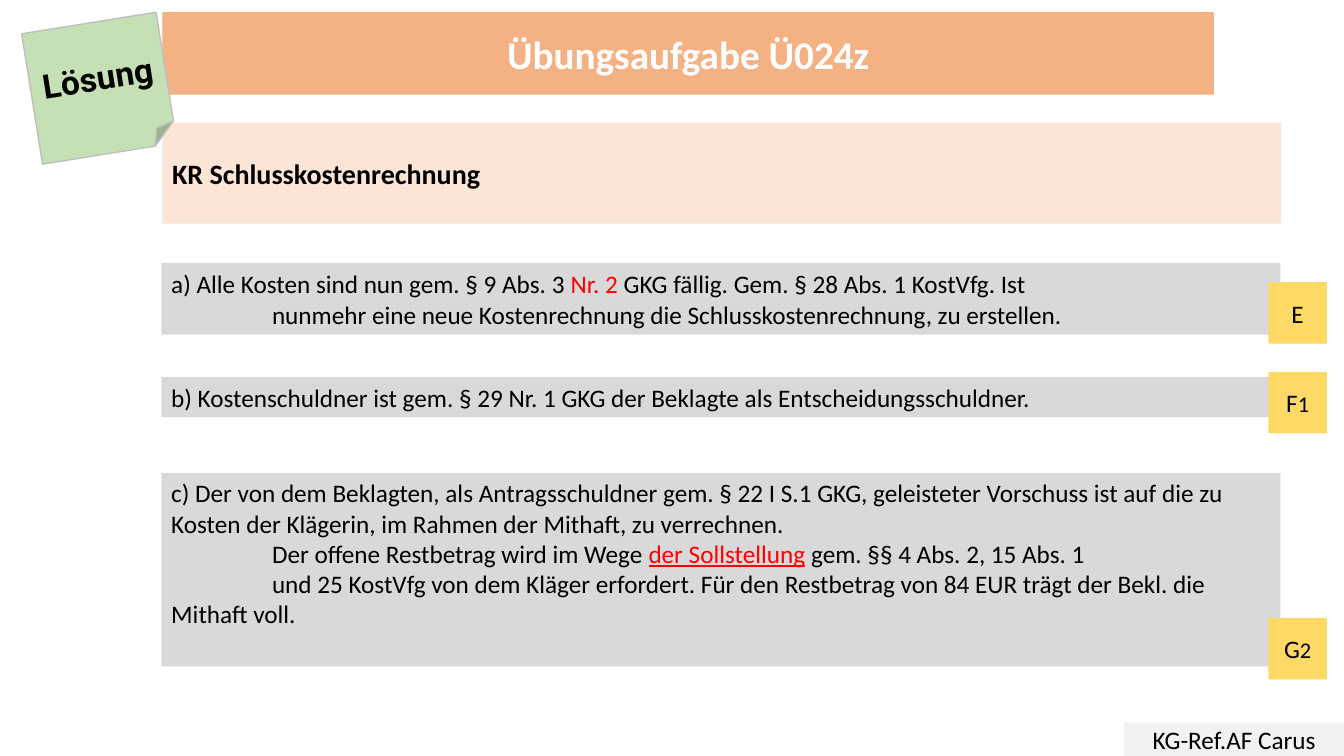
from pptx import Presentation
from pptx import util as u
from pptx.dml.color import RGBColor
from pptx.enum import shapes, text
from pptx.oxml.ns import qn

COLORS = {
    "header": "F4B183", "subject": "FBE5D6", "answer": "D9D9D9",
    "badge": "FFD966", "footer": "F2F2F2", "note": "C5E0B4",
    "note_edge": "BFBFBF", "ink": "000000", "white": "FFFFFF", "red": "FF0000",
}
SHAPE = shapes.MSO_SHAPE
ANCHOR = text.MSO_ANCHOR
CENTER, LEFT = text.PP_ALIGN.CENTER, text.PP_ALIGN.LEFT


def color(name):
    return RGBColor.from_string(COLORS[name])


class SolutionSlide:
    """Style and element builders for one slide."""

    def __init__(self, deck, font="Calibri"):
        self.font = font
        self.slide = deck.slides.add_slide(deck.slide_layouts[5])

    def fill_text(self, shape, paragraphs, size=18, ink="ink", bold=False,
                  align=LEFT, anchor=ANCHOR.MIDDLE, font=None):
        """Each paragraph is (first-line indent, runs); a run is (words, overrides)."""
        frame = shape.text_frame
        frame.word_wrap = True
        frame.auto_size = text.MSO_AUTO_SIZE.NONE
        frame.vertical_anchor = anchor
        for number, (indent, runs) in enumerate(paragraphs):
            paragraph = frame.add_paragraph() if number else frame.paragraphs[0]
            paragraph.alignment = align
            if indent:
                paragraph._p.get_or_add_pPr().set("indent", str(u.Inches(indent)))
            for words, style in runs:
                run = paragraph.add_run()
                run.text = words
                run.font.name = font or self.font
                run.font.size = u.Pt(style.get("size", size))
                run.font.bold = bold
                run.font.underline = style.get("underline", False)
                run.font.color.rgb = color(style.get("ink", ink))

    def title(self, box, words):
        header = self.slide.shapes.title
        header.left, header.top, header.width, header.height = map(u.Inches, box)
        outline = header._element.spPr.makeelement(qn("a:prstGeom"), {"prst": "roundRect"})
        header._element.spPr.append(outline)
        header.fill.solid()
        header.fill.fore_color.rgb = color("header")
        self.fill_text(header, [(0, [(words, {})])], size=28, ink="white",
                       bold=True, align=CENTER)

    def panel(self, box, fill, paragraphs, kind=SHAPE.RECTANGLE, edge=None, **style):
        panel = self.slide.shapes.add_shape(kind, *map(u.Inches, box))
        panel.shadow.inherit = False
        panel.fill.solid()
        panel.fill.fore_color.rgb = color(fill)
        if edge:
            panel.line.color.rgb = color(edge)
            panel.line.width = u.Pt(1)
        else:
            panel.line.fill.background()
        self.fill_text(panel, paragraphs, **style)
        return panel

    def answer(self, top, height, paragraphs, anchor=ANCHOR.MIDDLE):
        self.panel((1.6, top, 11.1, height), "answer", paragraphs, anchor=anchor)

    def badge(self, top, letter, digit):
        runs = [(letter, {})]
        if digit:
            runs.append((digit, {"size": 16}))
        self.panel((12.58, top, 0.58, 0.61), "badge", [(0, runs)], align=CENTER)


def main():
    deck = Presentation()
    deck.slide_width, deck.slide_height = u.Inches(13.33), u.Inches(7.5)
    page = SolutionSlide(deck)

    # Header, subject and footer
    page.title((1.61, 0.12, 10.43, 0.82), "Übungsaufgabe Ü024z")
    page.panel((1.61, 1.22, 11.1, 1), "subject",
               [(0, [("KR Schlusskostenrechnung", {})])], size=20, bold=True)
    page.panel((11.15, 7.17, 2.18, 0.33), "footer",
               [(0, [("KG-Ref.AF Carus", {})])], align=CENTER)

    # Sticky note
    note = page.panel((0.31, 0.22, 1.35, 1.31), "note", [(0, [("Lösung", {})])],
                      kind=SHAPE.FOLDED_CORNER, edge="note_edge",
                      size=24, bold=True, align=CENTER, font="Roboto")
    note.rotation = 350.9

    # Answers a) to c)
    page.answer(2.61, 0.71, [
        (0, [("a) Alle Kosten sind nun gem. § 9 Abs. 3 ", {}),
             ("Nr. 2 ", {"ink": "red"}),
             ("GKG fällig. Gem. § 28 Abs. 1 KostVfg. Ist", {})]),
        (1, [("nunmehr eine neue Kostenrechnung die Schlusskostenrechnung, zu erstellen.", {})]),
    ])
    page.answer(3.74, 0.4, [
        (0, [("b) Kostenschuldner ist gem. § 29 Nr. 1 GKG der Beklagte "
              "als Entscheidungsschuldner.", {})]),
    ])
    page.answer(4.69, 1.92, [
        (0, [("c) Der von dem Beklagten, als Antragsschuldner gem. § 22 I S.1 GKG, "
              "geleisteter Vorschuss ist auf die zu Kosten der Klägerin, "
              "im Rahmen der Mithaft, zu verrechnen.", {})]),
        (1, [("Der offene Restbetrag wird im Wege ", {}),
             ("der Sollstellung", {"ink": "red", "underline": True}),
             (" gem. §§ 4 Abs. 2, 15 Abs. 1", {})]),
        (1, [("und 25 KostVfg von dem Kläger erfordert. Für den Restbetrag "
              "von 84 EUR trägt der Bekl. die Mithaft voll.", {})]),
    ], anchor=ANCHOR.TOP)

    # Badges on the right edge
    for top, letter, digit in ((2.8, "E", ""), (3.69, "F", "1"), (6.13, "G", "2")):
        page.badge(top, letter, digit)

    deck.save("out.pptx")


if __name__ == "__main__":
    main()
